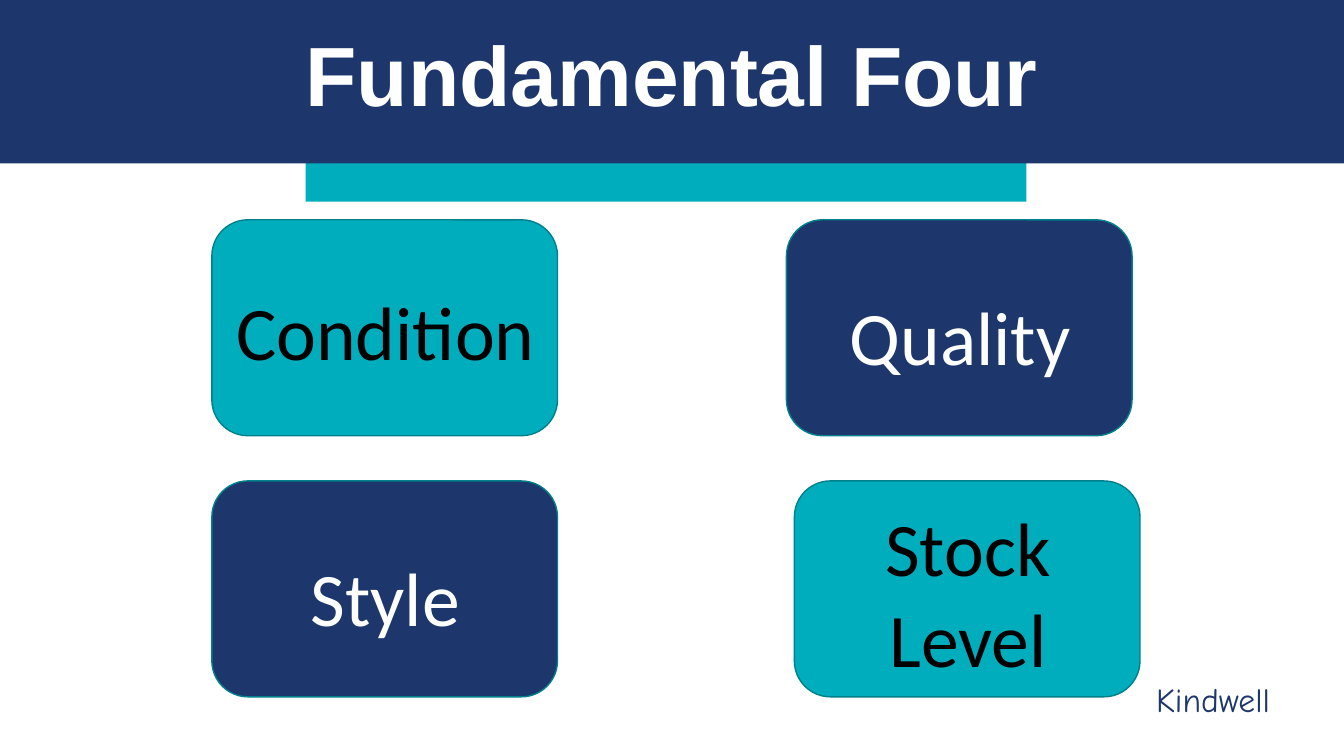
import pptx
import pptx.dml.color
import pptx.enum.shapes
import pptx.enum.text
import pptx.util

Cm = pptx.util.Cm
Pt = pptx.util.Pt
SHAPE = pptx.enum.shapes.MSO_SHAPE

COLOURS = {
    "teal": "00ADBC",
    "navy": "1D376C",
    "outline": "00808B",
    "white": "FFFFFF",
    "black": "000000",
}

SLIDE_WIDTH, SLIDE_HEIGHT = 33.87, 19.05
CARD_WIDTH, CARD_HEIGHT = 8.71, 5.44
LABEL_INSET, LABEL_WIDTH, LABEL_HEIGHT = 0.2, 8.35, 2.34

# Label, left, top, distance from card top to label, fill, text colour
CARDS = [
    ("Condition", 5.34, 5.54, 1.52, "teal", "black"),
    ("Quality", 19.82, 5.54, 1.65, "navy", "white"),
    ("Style", 5.34, 12.12, 1.65, "navy", "white"),
    ("Stock Level", 20.02, 12.12, 0.38, "teal", "black"),
]


def colour(name):
    return pptx.dml.color.RGBColor.from_string(COLOURS[name])


def set_attributes(target, values):
    for name, value in values.items():
        setattr(target, name, value)


def write_text(shape, text, font, size, colour_name, bold=False, spacing=None):
    """Put one centred paragraph of formatted text in a shape."""
    text_frame = shape.text_frame
    set_attributes(text_frame, {"word_wrap": True,
                                "vertical_anchor": pptx.enum.text.MSO_ANCHOR.TOP,
                                "auto_size": pptx.enum.text.MSO_AUTO_SIZE.NONE})
    paragraph = text_frame.paragraphs[0]
    set_attributes(paragraph, {"alignment": pptx.enum.text.PP_ALIGN.CENTER, **(spacing or {})})
    run = paragraph.add_run()
    run.text = text
    set_attributes(run.font, {"name": font, "size": Pt(size), "bold": bold})
    run.font.color.rgb = colour(colour_name)


def add_block(shapes, kind, left, top, width, height, fill, outline=None):
    """Add a filled preset shape, outlined only on request."""
    block = shapes.add_shape(kind, Cm(left), Cm(top), Cm(width), Cm(height))
    block.shadow.inherit = False
    block.fill.solid()
    block.fill.fore_color.rgb = colour(fill)
    if outline:
        block.line.color.rgb = colour(outline)
        block.line.width = Pt(1)
    else:
        block.line.fill.background()


def add_title(slide, text):
    """Place the title placeholder in front of the header band."""
    title = slide.shapes.title
    set_attributes(title, {"left": Cm(0), "top": Cm(0.69),
                           "width": Cm(SLIDE_WIDTH), "height": Cm(2.62)})
    write_text(title, text, "Arial", 60, "white", bold=True,
               spacing={"line_spacing": Pt(65), "space_before": Pt(0)})
    title.element.getparent().append(title.element)


def add_card(slide, label, left, top, label_offset, fill, text_colour):
    """Group a rounded card with its label."""
    group = slide.shapes.add_group_shape()
    add_block(group.shapes, SHAPE.ROUNDED_RECTANGLE, left, top,
              CARD_WIDTH, CARD_HEIGHT, fill, "outline")
    label_box = group.shapes.add_textbox(
        Cm(left + LABEL_INSET), Cm(top + label_offset),
        Cm(LABEL_WIDTH), Cm(LABEL_HEIGHT))
    write_text(label_box, label, "Calibri", 54, text_colour,
               spacing={"space_before": Pt(6)})


def main():
    presentation = pptx.Presentation()
    set_attributes(presentation, {"slide_width": Cm(SLIDE_WIDTH),
                                  "slide_height": Cm(SLIDE_HEIGHT)})
    slide = presentation.slides.add_slide(presentation.slide_layouts.get_by_name("Title Only"))

    # Header
    add_block(slide.shapes, SHAPE.RECTANGLE, 7.7, 3.5, 18.17, 1.58, "teal")
    add_block(slide.shapes, SHAPE.RECTANGLE, 0, 0, SLIDE_WIDTH, 4.12, "navy")
    add_title(slide, "Fundamental Four")

    # Organisation name
    name_box = slide.shapes.add_textbox(Cm(27.79), Cm(16.99), Cm(5.56), Cm(1.27))
    write_text(name_box, "Kindwell", "Comic Neue", 24, "navy")

    # Four cards
    for card in CARDS:
        add_card(slide, *card)

    presentation.save("out.pptx")


if __name__ == "__main__":
    main()
